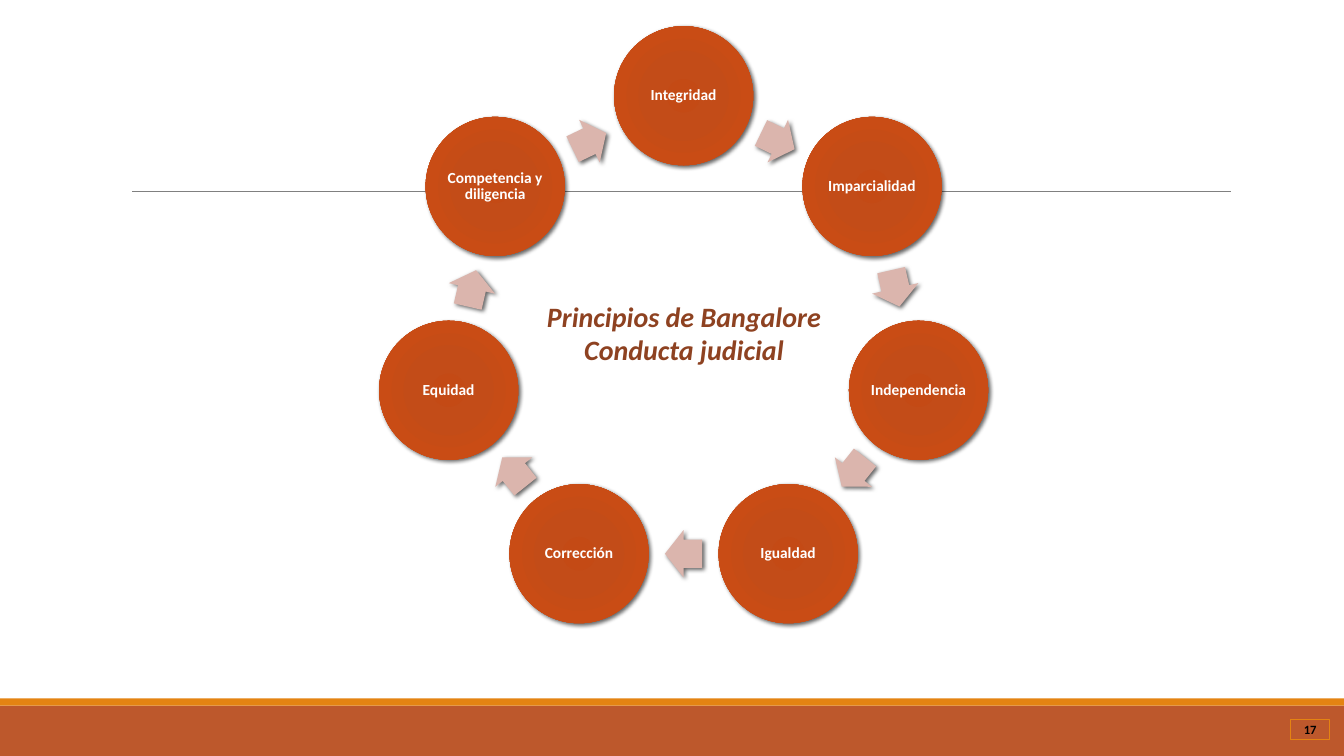
"""Build the slide with the ring of judicial conduct principles."""
import math

from pptx import Presentation, oxml
from pptx import util as u
from pptx.dml.color import RGBColor
from pptx.enum import shapes, text
from pptx.oxml.ns import nsdecls

PRINCIPLES = ["Integridad", "Imparcialidad", "Independencia", "Igualdad",
              "Corrección", "Equidad", "Competencia y diligencia"]
TITLE = ["Principios de Bangalore", "Conducta judicial"]
PAGE_NUMBER = "17"
BANDS = [((0, 7, 13.33, 0.5), "BD582C"), ((0, 6.93, 13.33, 0.07), "E48312")]
RULE = {"left": 1.31, "right": 12.21, "top": 1.9, "color": "808080", "width": 0.5}
CENTER_X, CENTER_Y, RADIUS = 6.78, 3.34, 2.39
DIAMETER = 1.38
ARROW_WIDTH, ARROW_HEIGHT = 0.37, 0.47
ARROW_COLOR = "DBB5AD"
GRADIENT = [(0, "C44A15"), (34, "C34C18"), (70, "C94C15"), (100, "C45525")]
CIRCLE_FONT = {"name": "Calibri", "size": u.Pt(11), "bold": True}
TITLE_FONT = {"name": "Calibri", "size": u.Pt(20), "bold": True, "italic": True}
NUMBER_FONT = {"name": "Calibri", "size": u.Pt(9), "bold": True}
CIRCLE_FRAME = {"word_wrap": True, "vertical_anchor": text.MSO_ANCHOR.MIDDLE,
                **{f"margin_{side}": 0
                   for side in ("left", "top", "right", "bottom")}}
TITLE_FRAME = {"word_wrap": False, "auto_size": text.MSO_AUTO_SIZE.SHAPE_TO_FIT_TEXT}
NUMBER_FRAME = {"word_wrap": True, "vertical_anchor": text.MSO_ANCHOR.MIDDLE}


def color(value):
    return RGBColor.from_string(value)


def apply(target, values):
    for name, value in values.items():
        setattr(target, name, value)


def add_shape(slide, kind, box, fill=None):
    shape = slide.shapes.add_shape(kind, *map(u.Inches, box))
    shape.shadow.inherit = False
    shape.line.fill.background()
    if fill:
        shape.fill.solid()
        shape.fill.fore_color.rgb = color(fill)
    else:
        shape.fill.background()
    return shape


def add_shadow(shape):
    effects = shape._element.spPr.find(oxml.ns.qn("a:effectLst"))
    effects.append(oxml.parse_xml(
        f'<a:outerShdw {nsdecls("a")} blurRad="{u.Pt(3)}" dist="{u.Pt(2)}" '
        'dir="2700000" algn="ctr" rotWithShape="0"><a:srgbClr val="000000">'
        '<a:alpha val="60000"/></a:srgbClr></a:outerShdw>'))


def add_gradient(shape):
    stops = "".join(f'<a:gs pos="{position * 1000}"><a:srgbClr val="{value}"/></a:gs>'
                    for position, value in GRADIENT)
    properties = shape._element.spPr
    properties.replace(properties.find(oxml.ns.qn("a:noFill")), oxml.parse_xml(
        f'<a:gradFill {nsdecls("a")} rotWithShape="1"><a:gsLst>{stops}</a:gsLst>'
        '<a:path path="circle"><a:fillToRect l="100000" t="100000" r="100000" '
        'b="100000"/></a:path></a:gradFill>'))


def write(shape, lines, font, font_color, frame_format, spacing=1.0):
    frame = shape.text_frame
    apply(frame, frame_format)
    for index, line in enumerate(lines):
        paragraph = frame.add_paragraph() if index else frame.paragraphs[0]
        apply(paragraph, {"alignment": text.PP_ALIGN.CENTER, "line_spacing": spacing})
        run = paragraph.add_run()
        run.text = line
        apply(run.font, font)
        run.font.color.rgb = color(font_color)


def ring_box(angle, radius, width, height):
    x = CENTER_X + radius * math.sin(math.radians(angle))
    y = CENTER_Y - radius * math.cos(math.radians(angle))
    return x - width / 2, y - height / 2, width, height


def add_rule(slide):
    line = slide.shapes.add_connector(
        shapes.MSO_CONNECTOR.STRAIGHT,
        *(u.Inches(RULE[key]) for key in ("left", "top", "right", "top")))
    line.line.color.rgb = color(RULE["color"])
    line.line.width = u.Pt(RULE["width"])
    line._element.spPr.append(oxml.parse_xml(f'<a:effectLst {nsdecls("a")}/>'))


def add_ring(slide):
    step = 360 / len(PRINCIPLES)
    arrow_radius = RADIUS * math.cos(math.radians(step / 2))
    for index, principle in enumerate(PRINCIPLES):
        circle = add_shape(slide, shapes.MSO_SHAPE.OVAL,
                           ring_box(index * step, RADIUS, DIAMETER, DIAMETER))
        add_gradient(circle)
        add_shadow(circle)
        write(circle, [principle], CIRCLE_FONT, "FFFFFF", CIRCLE_FRAME, 0.9)
        angle = (index + 0.5) * step
        arrow = add_shape(slide, shapes.MSO_SHAPE.RIGHT_ARROW,
                          ring_box(angle, arrow_radius, ARROW_WIDTH, ARROW_HEIGHT),
                          ARROW_COLOR)
        arrow.adjustments[0], arrow.adjustments[1] = 0.6, 0.5
        arrow.rotation = angle
        add_shadow(arrow)


def main():
    presentation = Presentation()
    apply(presentation, {"slide_width": u.Inches(13.33), "slide_height": u.Inches(7.5)})
    slide = presentation.slides.add_slide(presentation.slide_layouts[6])
    for box, fill in BANDS:
        add_shape(slide, shapes.MSO_SHAPE.RECTANGLE, box, fill)
    add_rule(slide)
    add_ring(slide)
    title = slide.shapes.add_textbox(*map(u.Inches, (5.32, 2.92, 2.93, 0.77)))
    write(title, TITLE, TITLE_FONT, "8E4221", TITLE_FRAME)
    number = add_shape(slide, shapes.MSO_SHAPE.RECTANGLE, (12.8, 7.14, 0.39, 0.2))
    number.line.color.rgb = color("E48312")
    number.line.width = u.Pt(0.75)
    write(number, [PAGE_NUMBER], NUMBER_FONT, "000000", NUMBER_FRAME)
    presentation.save("out.pptx")


if __name__ == "__main__":
    main()
